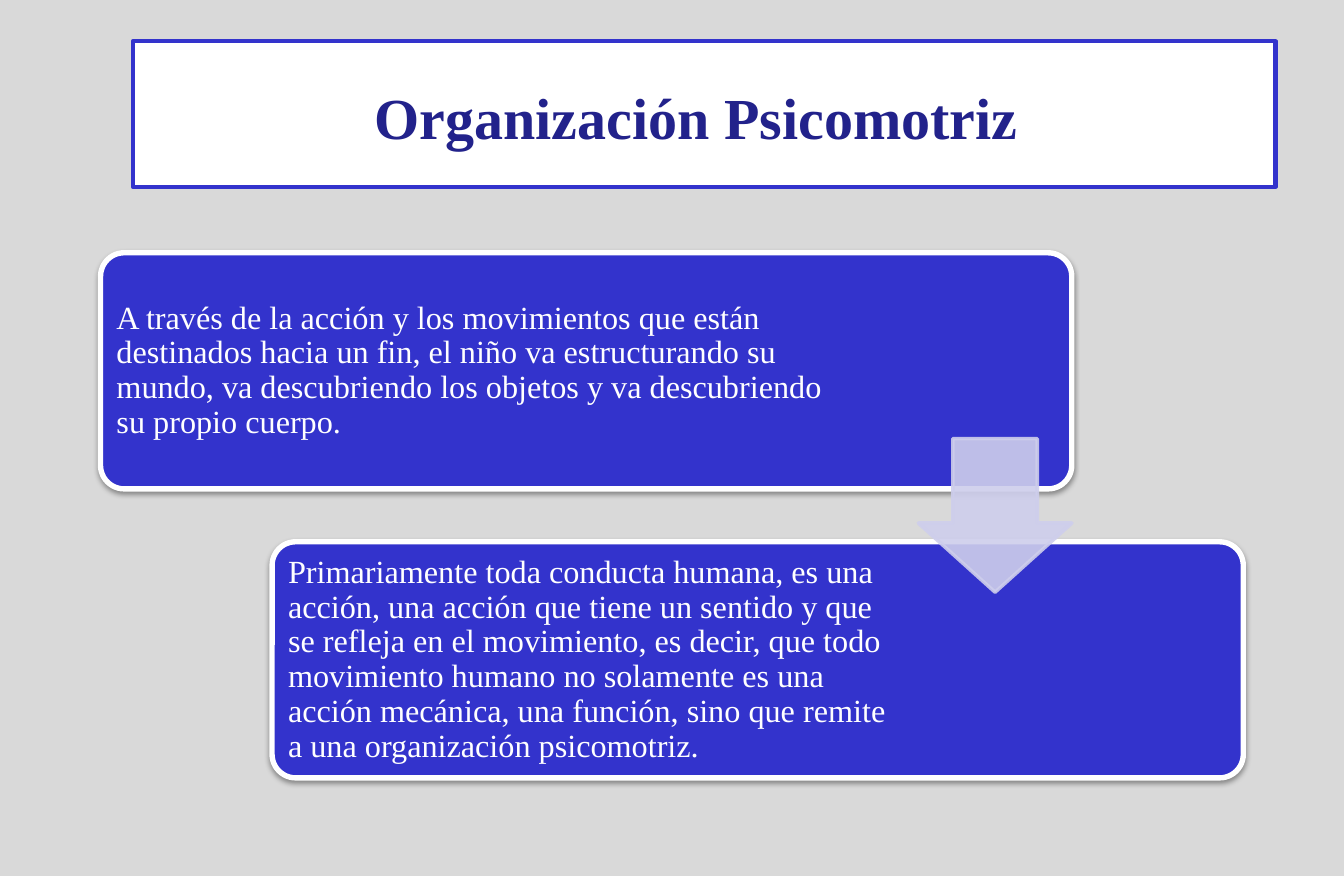
from dataclasses import dataclass
from lxml.etree import SubElement
from pptx import Presentation
from pptx.dml.color import RGBColor
from pptx.enum.shapes import MSO_SHAPE
from pptx.enum.text import MSO_ANCHOR, PP_ALIGN
from pptx.oxml.ns import qn
from pptx.util import Inches, Pt


@dataclass(frozen=True)
class Theme:
    font: str = "Times New Roman"
    back: str = "D9D9D9"
    blue: str = "3333CC"
    navy: str = "22228B"
    pale: str = "CECEEC"
    white: str = "FFFFFF"
    shade: str = "000000"
    head: float = 32.4
    body: float = 18


THEME = Theme()
STEPS = [
    ("A través de la acción y los movimientos que están destinados hacia un fin, "
     "el niño va estructurando su mundo, va descubriendo los objetos y va "
     "descubriendo su propio cuerpo.", 1.87),
    ("Primariamente toda conducta humana, es una acción, una acción que tiene un "
     "sentido y que se refleja en el movimiento, es decir, que todo movimiento "
     "humano no solamente es una acción mecánica, una función, sino que remite a "
     "una organización psicomotriz.", 2.6),
]


def apply(item, form):
    for name, value in form.items():
        setattr(item, name, value)


def paint(fill, color):
    fill.solid()
    fill.fore_color.rgb = RGBColor.from_string(color)


def block(slide, kind, box, fill, line, width):
    shape = slide.shapes.add_shape(kind, *map(Inches, box))
    shape.shadow.inherit = False
    paint(shape.fill, fill)
    paint(shape.line.fill, line)
    shape.line.width = Pt(width)
    return shape


def write(shape, text, pads, size, color, align, bold=False):
    frame = shape.text_frame
    sides = ("margin_left", "margin_top", "margin_right", "margin_bottom")
    apply(frame, dict(zip(sides, map(Inches, pads))))
    apply(frame, {"word_wrap": True, "vertical_anchor": MSO_ANCHOR.MIDDLE})
    para = frame.paragraphs[0]
    apply(para, {"alignment": align, "line_spacing": 0.9})
    run = para.add_run()
    run.text = text
    apply(run.font, {"name": THEME.font, "size": Pt(size), "bold": bold})
    run.font.color.rgb = RGBColor.from_string(color)


def cast(shape):
    effects = shape.element.spPr.find(qn("a:effectLst"))
    outer = SubElement(effects, qn("a:outerShdw"), blurRad=str(Pt(3.1)),
                       dist=str(Pt(1.6)), dir="5400000", rotWithShape="0")
    color = SubElement(outer, qn("a:srgbClr"), val=THEME.shade)
    SubElement(color, qn("a:alpha"), val="38000")


def title(slide, box):
    shape = block(slide, MSO_SHAPE.RECTANGLE, box, THEME.white, THEME.blue, 2.25)
    write(shape, "Organización Psicomotriz", (0.1, 0.15, 0.22, 0.05),
          THEME.head, THEME.navy, PP_ALIGN.CENTER, True)


def card(slide, box, text, pad):
    shape = block(slide, MSO_SHAPE.ROUNDED_RECTANGLE, box, THEME.blue,
                  THEME.white, 3)
    shape.adjustments[0] = 0.1
    cast(shape)
    write(shape, text, (0.07, 0.07, pad, 0.07), THEME.body, THEME.white,
          PP_ALIGN.LEFT)


def arrow(slide, box):
    shape = block(slide, MSO_SHAPE.DOWN_ARROW, box, THEME.pale, THEME.pale, 2)
    shape.adjustments[0] = 0.55
    shape.adjustments[1] = 0.45
    for color in shape.element.spPr.iter(qn("a:srgbClr")):
        SubElement(color, qn("a:alpha"), val="90000")


def flow(slide, box):
    left, top, width, height = box
    wide, tall, side = 7.53, 1.83, 1.19
    for index, (text, pad) in enumerate(STEPS):
        place = (left + index * (width - wide), top + index * (height - tall),
                 wide, tall)
        card(slide, place, text, pad)
    arrow(slide, (left + wide - side, top + (height - side) / 2, side, side))


def main():
    deck = Presentation()
    apply(deck, {"slide_width": Inches(10.42), "slide_height": Inches(6.79)})
    slide = deck.slides.add_slide(deck.slide_layouts[6])
    paint(slide.background.fill, THEME.back)
    title(slide, (1.03, 0.32, 8.86, 1.13))
    flow(slide, (0.78, 1.96, 8.86, 4.07))
    deck.save("out.pptx")


if __name__ == "__main__":
    main()
